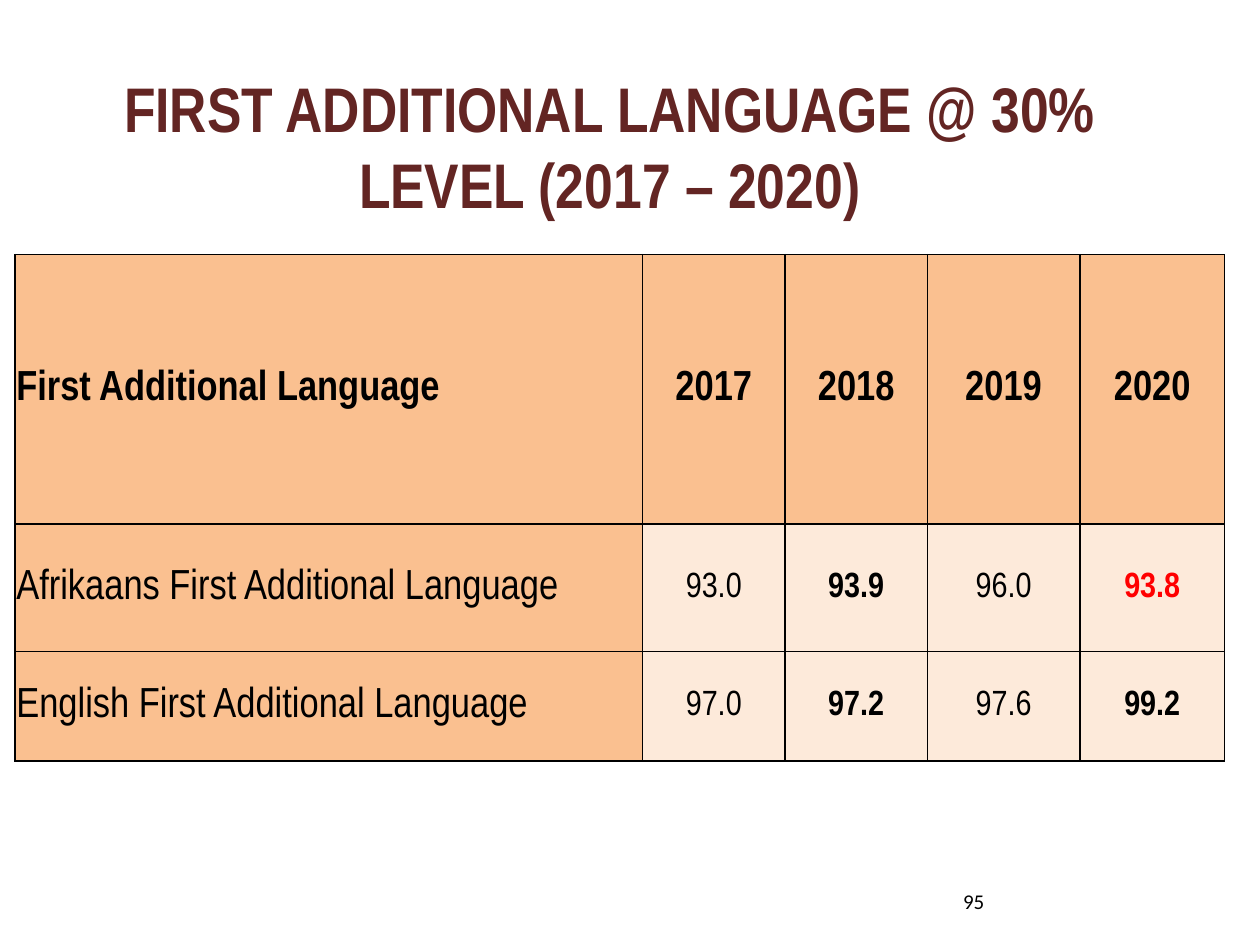
from lxml.etree import SubElement
from pptx import Presentation
from pptx.dml.color import RGBColor
from pptx.enum.text import MSO_ANCHOR, PP_ALIGN
from pptx.oxml.ns import qn
from pptx.util import Inches, Pt

COLORS = {
    "title": "632523",
    "text": "000000",
    "decline": "FF0000",
    "header": "FAC090",
    "body": "FDEADA",
    "border": "000000",
}
COLUMN_WIDTHS = [4.98, 1.13, 1.13, 1.21, 1.15]
ROW_HEIGHTS = [2.14, 1.01, 0.87]
RESULTS = [
    ["First Additional Language", "2017", "2018", "2019", "2020"],
    ["Afrikaans First Additional Language", "93.0", "93.9", "96.0", "93.8"],
    ["English First Additional Language", "97.0", "97.2", "97.6", "99.2"],
]
DECLINES = {(1, 4)}


def rgb(name):
    return RGBColor.from_string(COLORS[name])


def write(tf, text, size=24, font="Arial Narrow", color="text", bold=False,
          align=PP_ALIGN.LEFT):
    p = tf.paragraphs[0]
    p.alignment = align
    r = p.add_run()
    r.text = text
    r.font.size = Pt(size)
    r.font.name = font
    r.font.bold = bold
    r.font.color.rgb = rgb(color)


def add_borders(cell, width=1):
    tcPr = cell._tc.get_or_add_tcPr()
    for side in ("a:lnL", "a:lnR", "a:lnT", "a:lnB"):
        ln = SubElement(tcPr, qn(side), w=str(Pt(width)))
        fill = SubElement(ln, qn("a:solidFill"))
        SubElement(fill, qn("a:srgbClr"), val=COLORS["border"])


def add_title(slide, left, top, width, height):
    sp = slide.shapes.title
    sp.left, sp.top, sp.width, sp.height = map(Inches, (left, top, width, height))
    tf = sp.text_frame
    tf.word_wrap = True
    tf.vertical_anchor = MSO_ANCHOR.MIDDLE
    write(tf, "FIRST ADDITIONAL LANGUAGE @ 30% LEVEL (2017 – 2020)", size=36,
          color="title", bold=True, align=PP_ALIGN.CENTER)


def add_results_table(slide, left, top, width, height):
    table = slide.shapes.add_table(
        len(RESULTS), len(RESULTS[0]),
        *map(Inches, (left, top, width, height))).table
    for column, size in zip(table.columns, COLUMN_WIDTHS):
        column.width = Inches(size)
    for row, size in zip(table.rows, ROW_HEIGHTS):
        row.height = Inches(size)

    for i, values in enumerate(RESULTS):
        for j, value in enumerate(values):
            cell = table.cell(i, j)
            is_label = i == 0 or j == 0
            cell.margin_left = cell.margin_right = cell.margin_top = Inches(0.01)
            cell.margin_bottom = 0
            cell.vertical_anchor = MSO_ANCHOR.MIDDLE
            add_borders(cell)
            cell.fill.solid()
            cell.fill.fore_color.rgb = rgb("header" if is_label else "body")
            # Header row and every second year are bold
            write(cell.text_frame, value, size=24 if is_label else 20,
                  bold=i == 0 or j in (2, 4),
                  color="decline" if (i, j) in DECLINES else "text",
                  align=PP_ALIGN.CENTER if j else PP_ALIGN.LEFT)


def add_page_number(slide, left, top, width, height):
    sp = slide.shapes.add_textbox(*map(Inches, (left, top, width, height)))
    tf = sp.text_frame
    tf.word_wrap = True
    tf.vertical_anchor = MSO_ANCHOR.MIDDLE
    write(tf, "95", size=12, font="Calibri", align=PP_ALIGN.RIGHT)


def main():
    prs = Presentation()
    prs.slide_width, prs.slide_height = Inches(10), Inches(7.5)
    slide = prs.slides.add_slide(prs.slide_layouts[5])  # title only
    add_title(slide, 0.34, 0.53, 9, 1.25)
    add_results_table(slide, 0.12, 2.02, sum(COLUMN_WIDTHS), sum(ROW_HEIGHTS))
    add_page_number(slide, 7.36, 6.9, 0.55, 0.51)
    prs.save("out.pptx")


if __name__ == "__main__":
    main()
